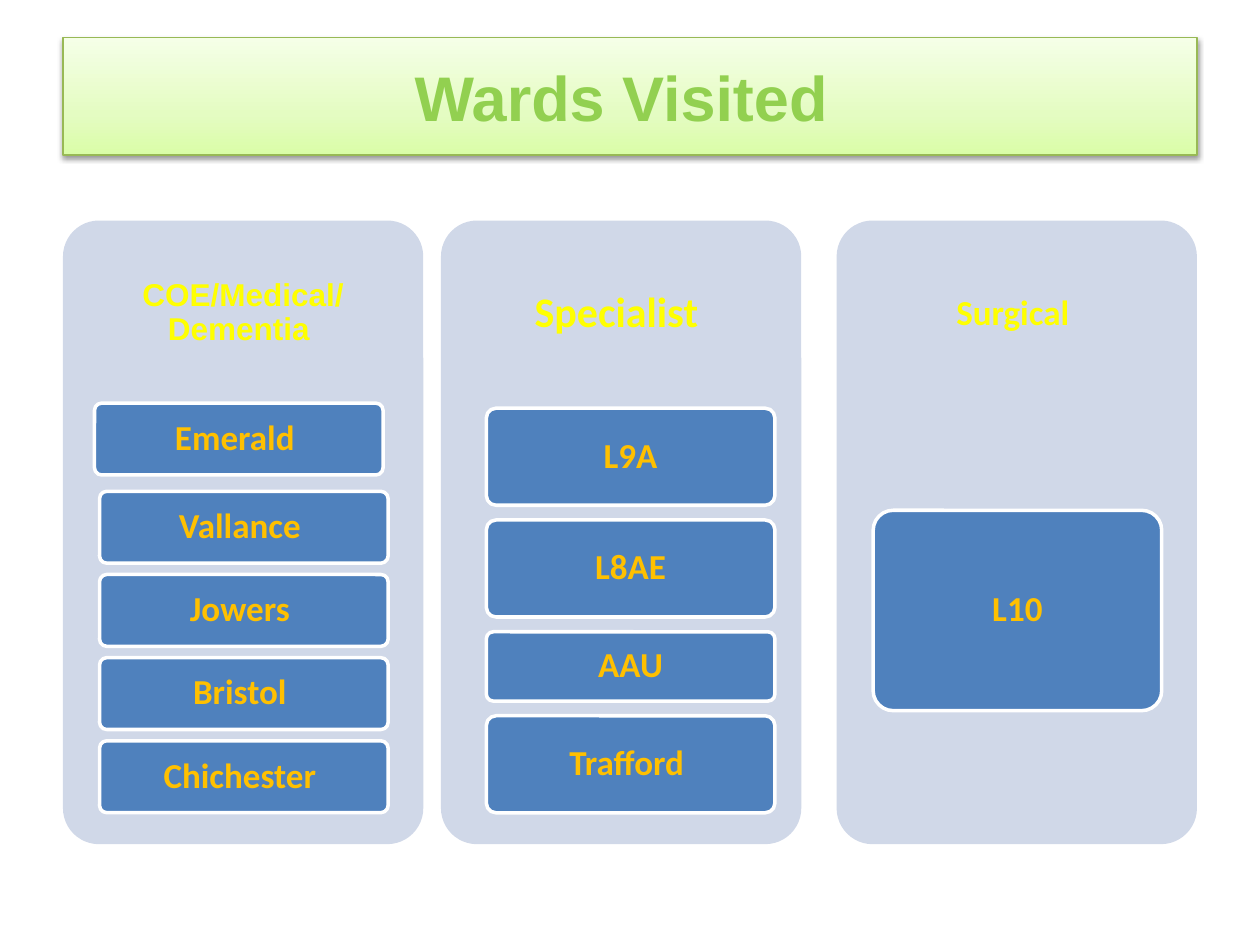
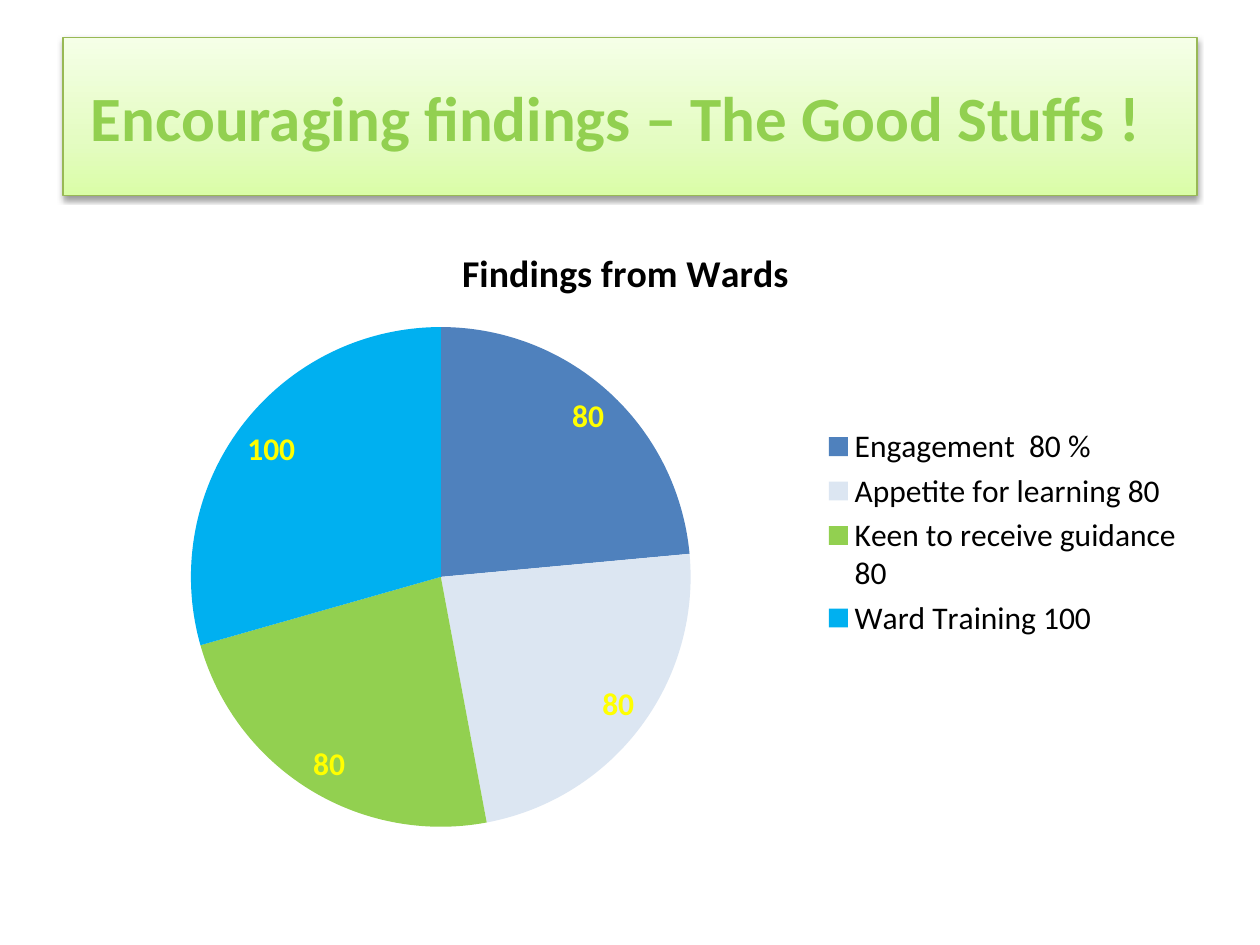
from lxml import etree
from pptx import Presentation
from pptx import util as u
from pptx.chart.data import CategoryChartData
from pptx.dml.color import RGBColor
from pptx.enum import chart as charts, shapes, text
from pptx.oxml import parse_xml
from pptx.oxml.ns import nsdecls, qn

# Palette
LIME = RGBColor(0x92, 0xD0, 0x50)
BAND_LINE = RGBColor(0x98, 0xB9, 0x55)
PANEL = RGBColor(0xD0, 0xD8, 0xE8)
BLUE = RGBColor(0x4F, 0x81, 0xBD)
PALE_BLUE = RGBColor(0xDC, 0xE6, 0xF2)
SKY = RGBColor(0x00, 0xB0, 0xF0)
YELLOW = RGBColor(0xFF, 0xFF, 0x00)
AMBER = RGBColor(0xFF, 0xC0, 0x00)
WHITE = RGBColor(0xFF, 0xFF, 0xFF)
BLACK = RGBColor(0x00, 0x00, 0x00)

BAND_STOPS = [(0, "DAFDA7"), (35, "E4FCC2"), (100, "F5FFE7")]
BAND_SHADOW = (
    f'<a:effectLst {nsdecls("a")}>'
    '<a:outerShdw blurRad="40000" dist="20000" dir="5400000" rotWithShape="0">'
    '<a:srgbClr val="000000"><a:alpha val="38000"/></a:srgbClr>'
    '</a:outerShdw></a:effectLst>')

# Grid: 100 columns by 75 rows
COLUMNS, ROWS = 100, 75
MARGIN, BODY_TOP, BODY_WIDTH, BODY_HEIGHT = 5, 17.5, 90, 49.5
PANEL_WIDTH, HEADING_HEIGHT, TILE_WIDTH = 28.6, 14.8, 22.9


class Deck:
    """Holds the shared style and the slide being built."""

    def __init__(self):
        self.prs = Presentation()
        self.prs.slide_width, self.prs.slide_height = u.Inches(10), u.Inches(7.5)
        self.slide = None

    def box(self, left, top, width, height):
        col = self.prs.slide_width / COLUMNS
        row = self.prs.slide_height / ROWS
        return [round(n) for n in (left * col, top * row, width * col, height * row)]

    def style_font(self, font, size, color, bold=True, name="Calibri"):
        font.size, font.bold, font.name = u.Pt(size), bold, name
        font.color.rgb = color

    def put_text(self, shape, words, size, color, name="Calibri", spacing=0.9, inset=None):
        frame = shape.text_frame
        frame.text = words
        frame.word_wrap = True
        frame.auto_size = text.MSO_AUTO_SIZE.NONE
        frame.vertical_anchor = text.MSO_ANCHOR.MIDDLE
        if inset is not None:
            frame.margin_left = frame.margin_right = u.Inches(inset)
            frame.margin_top = frame.margin_bottom = u.Inches(inset)
        paragraph = frame.paragraphs[0]
        paragraph.alignment = text.PP_ALIGN.CENTER
        paragraph.line_spacing = spacing
        for run in paragraph.runs:
            self.style_font(run.font, size, color, name=name)

    def titled_slide(self, words, height, name):
        self.slide = self.prs.slides.add_slide(self.prs.slide_layouts[5])
        band = self.slide.shapes.title
        band.left, band.top, band.width, band.height = self.box(
            MARGIN, 3, BODY_WIDTH, height)
        self.put_text(band, words, 36, LIME, name, spacing=1.0)
        # Three-stop gradient, thin outline and soft shadow
        band.fill.gradient()
        band.fill.gradient_angle = 90
        props = band._element.spPr
        stops = props.find(qn("a:gradFill")).find(qn("a:gsLst"))
        for stop in list(stops):
            stops.remove(stop)
        for position, color in BAND_STOPS:
            stop = etree.SubElement(stops, qn("a:gs"), pos=str(position * 1000))
            etree.SubElement(stop, qn("a:srgbClr"), val=color)
        band.line.color.rgb = BAND_LINE
        band.line.width = u.Pt(0.75)
        props.append(parse_xml(BAND_SHADOW))

    def rounded(self, left, top, width, height, color):
        shape = self.slide.shapes.add_shape(
            shapes.MSO_SHAPE.ROUNDED_RECTANGLE, *self.box(left, top, width, height))
        shape.adjustments[0] = 0.1
        shape.shadow.inherit = False
        shape.fill.solid()
        shape.fill.fore_color.rgb = color
        shape.line.fill.background()
        return shape

    def panel(self, left, heading, size, name, inset):
        self.rounded(left, BODY_TOP, PANEL_WIDTH, BODY_HEIGHT, PANEL)
        label = self.slide.shapes.add_textbox(
            *self.box(left, BODY_TOP, PANEL_WIDTH, HEADING_HEIGHT))
        self.put_text(label, heading, size, YELLOW, name, inset=inset)

    def tiles(self, left, top, gap, wards):
        for ward, height in wards:
            tile = self.rounded(left, top, TILE_WIDTH, height, BLUE)
            tile.line.color.rgb = WHITE
            tile.line.width = u.Pt(2)
            self.put_text(tile, ward, 20, AMBER, inset=0.05)
            top += height + gap

    def pie(self, heading, findings):
        data = CategoryChartData()
        data.categories = [category for category, _, _ in findings]
        data.add_series("Series 1", [value for _, value, _ in findings])
        chart = self.slide.shapes.add_chart(
            charts.XL_CHART_TYPE.PIE,
            *self.box(MARGIN, BODY_TOP, BODY_WIDTH, BODY_HEIGHT), data).chart
        self.style_font(chart.font, 18, BLACK, bold=False)
        # Heading and legend
        chart.has_title = True
        chart.chart_title.include_in_layout = False
        chart.chart_title.text_frame.text = heading
        for run in chart.chart_title.text_frame.paragraphs[0].runs:
            self.style_font(run.font, 21.6, BLACK)
        chart.has_legend = True
        chart.legend.position = charts.XL_LEGEND_POSITION.RIGHT
        chart.legend.include_in_layout = False
        # Slices and their values
        plot = chart.plots[0]
        plot.vary_by_categories = True
        plot.has_data_labels = True
        labels = plot.data_labels
        labels.show_value, labels.show_percentage = True, False
        labels.position = charts.XL_LABEL_POSITION.INSIDE_END
        self.style_font(labels.font, 18, YELLOW)
        for index, (_, _, color) in enumerate(findings):
            fill = plot.series[0].points[index].format.fill
            fill.solid()
            fill.fore_color.rgb = color


def main():
    deck = Deck()

    # Wards grouped by type
    deck.titled_slide("Wards Visited ", 9.3, "Arial")
    deck.panel(MARGIN, "COE/Medical/Dementia ", 18, "Arial", 0.07)
    deck.tiles(7.5, 32, 0, [("Emerald ", 5.7)])
    deck.tiles(7.9, 39, 0.9, [(ward, 5.7) for ward in
                              ("Vallance ", "Jowers ", "Bristol ", "Chichester ")])
    deck.panel(35, "Specialist ", 24, "Calibri", 0.1)
    deck.tiles(38.6, 32.4, 1.17, [("L9A", 7.7), ("L8AE", 7.7),
                                  ("AAU", 5.5), ("Trafford ", 7.7)])
    deck.panel(66.4, "Surgical ", 20, "Calibri", 0.08)
    deck.tiles(69.3, 40.5, 0, [("L10", 15.9)])

    # Findings
    deck.titled_slide("Encouraging findings – The Good Stuffs !  ", 12.5, "Calibri")
    deck.pie("Findings from Wards ", [
        ("Engagement  80 %", 80, BLUE),
        ("Appetite for learning 80", 80, PALE_BLUE),
        ("Keen to receive guidance 80", 80, LIME),
        ("Ward Training 100", 100, SKY),
    ])

    deck.prs.save("out.pptx")


if __name__ == "__main__":
    main()
